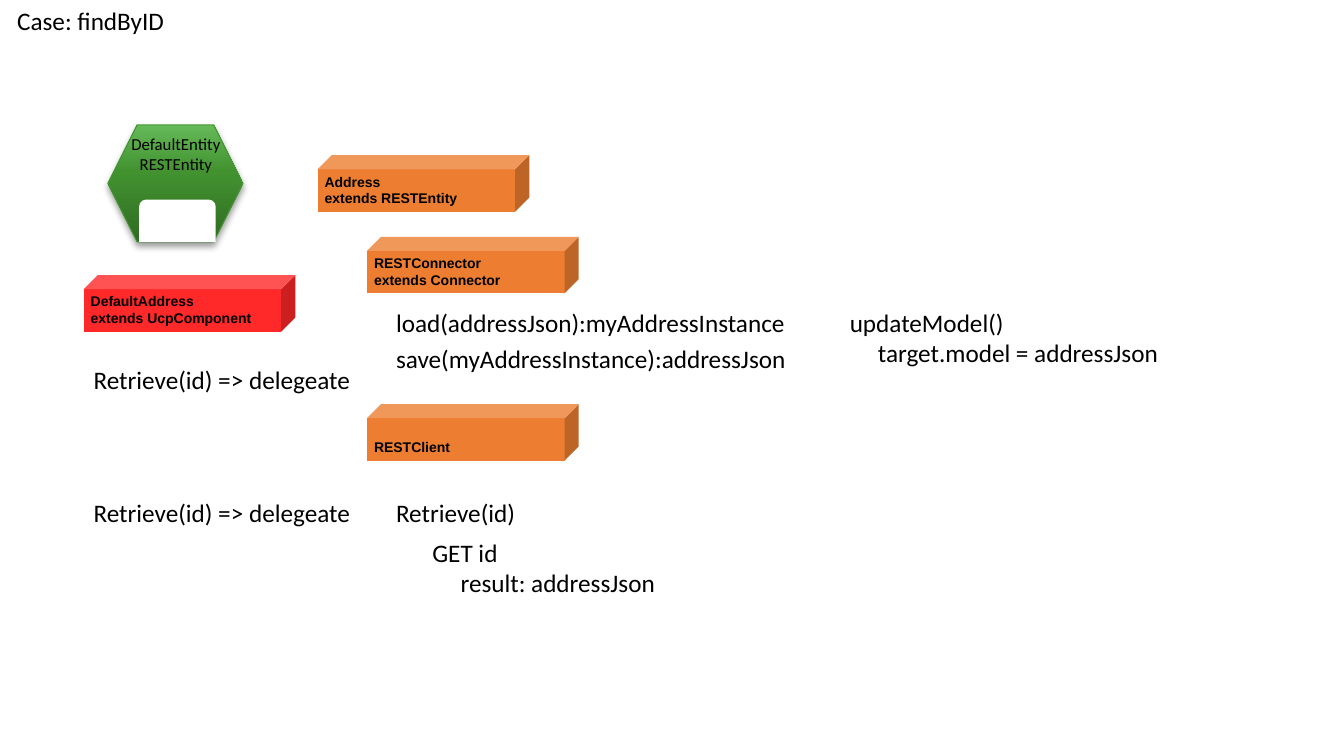
import copy
from dataclasses import dataclass

import pptx
import pptx.dml.color
import pptx.enum.shapes
import pptx.enum.text
import pptx.oxml
import pptx.oxml.ns
import pptx.util

SHAPE = pptx.enum.shapes.MSO_SHAPE
ANCHOR = pptx.enum.text.MSO_ANCHOR
ALIGN = pptx.enum.text.PP_ALIGN
FIT = pptx.enum.text.MSO_AUTO_SIZE


@dataclass(frozen=True)
class Theme:
    ink: str = "000000"
    paper: str = "FFFFFF"
    red: str = "FF2929"
    orange: str = "ED7D31"
    edge: str = "439631"
    greens: tuple = ((0, "2F6B22"), (0.6, "429230"), (1, "66B959"))
    body_font: str = "Calibri"
    cube_font: str = "Arial"
    body: int = 18
    caption: int = 12
    cube: int = 10


def rgb(value):
    return pptx.dml.color.RGBColor.from_string(value)


def write(tf, lines, *, font, size, color, bold=False, align=ALIGN.LEFT, indent=0):
    """Put each line in its own paragraph; indent those after the first."""
    for i, line in enumerate(lines):
        p = tf.add_paragraph() if i else tf.paragraphs[0]
        p.alignment = align
        if i and indent:
            p._p.get_or_add_pPr().set("marL", str(pptx.util.Inches(indent)))
        r = p.add_run()
        r.text = line
        r.font.name, r.font.size, r.font.bold = font, pptx.util.Pt(size), bold
        r.font.color.rgb = rgb(color)


class Board:
    """A slide on a grid of 133.3 columns by 75 rows of square cells."""

    def __init__(self, prs, theme):
        self.theme = theme
        self.cell_w, self.cell_h = prs.slide_width / 133.3, prs.slide_height / 75
        self.s = prs.slides.add_slide(prs.slide_layouts[5])

    def box(self, col, row, cols, rows):
        return (round(col * self.cell_w), round(row * self.cell_h),
                round(cols * self.cell_w), round(rows * self.cell_h))

    def fit_text(self, sp, lines, size, **style):
        tf = sp.text_frame
        tf.word_wrap, tf.auto_size = False, FIT.SHAPE_TO_FIT_TEXT
        tf.vertical_anchor = ANCHOR.TOP
        write(tf, lines, font=self.theme.body_font, size=size,
              color=self.theme.ink, **style)

    def title(self, text, *place):
        sp = self.s.shapes.title
        sp.left, sp.top, sp.width, sp.height = self.box(*place)
        self.fit_text(sp, [text], self.theme.body)

    def label(self, col, row, cols, *lines, size=None, rows=None, **style):
        rows = rows or 0.9 + 3.1 * len(lines)
        sp = self.s.shapes.add_textbox(*self.box(col, row, cols, rows))
        self.fit_text(sp, lines, size or self.theme.body, **style)

    def shape(self, kind, place, shapes=None):
        sp = (shapes or self.s.shapes).add_shape(kind, *self.box(*place))
        sp.shadow.inherit = False
        sp.line.fill.background()
        return sp

    def cube(self, col, row, fill, *lines):
        sp = self.shape(SHAPE.CUBE, (col, row, 21, 5.6))
        sp.fill.solid()
        sp.fill.fore_color.rgb = rgb(fill)
        tf = sp.text_frame
        tf.word_wrap = True
        tf.vertical_anchor = ANCHOR.BOTTOM
        tf.margin_left = tf.margin_right = pptx.util.Inches(0.07)
        tf.margin_top, tf.margin_bottom = pptx.util.Inches(0.03), pptx.util.Inches(0.05)
        write(tf, lines, font=self.theme.cube_font, size=self.theme.cube,
              color=self.theme.ink, bold=True)

    def entity(self, col, row):
        """Draw the green hexagon with its white socket."""
        group = self.s.shapes.add_group_shape()
        sp = self.shape(SHAPE.HEXAGON, (col, row, 13.4, 11.6), group.shapes)
        sp.line.color.rgb = rgb(self.theme.edge)
        sp.line.width = pptx.util.Pt(0.75)
        sp.fill.gradient()
        sp.fill.gradient_angle = 90
        qn = pptx.oxml.ns.qn
        spPr = sp._element.spPr
        stops = spPr.find(".//" + qn("a:gsLst"))
        stops.append(copy.deepcopy(stops[-1]))
        for stop, (position, color) in zip(sp.fill.gradient_stops, self.theme.greens):
            stop.position, stop.color.rgb = position, rgb(color)
        spPr.find(qn("a:effectLst")).append(pptx.oxml.parse_xml(
            f'<a:outerShdw {pptx.oxml.ns.nsdecls("a")} blurRad="{pptx.util.Pt(5.2)}" '
            f'dist="{pptx.util.Pt(3)}" dir="5400000" rotWithShape="0">'
            f'<a:srgbClr val="{self.theme.ink}"><a:alpha val="40000"/></a:srgbClr>'
            '</a:outerShdw>'))
        socket = self.shape(SHAPE.ROUND_2_SAME_RECTANGLE,
                            (col + 3.1, row + 7.4, 7.6, 4.2), group.shapes)
        socket.fill.solid()
        socket.fill.fore_color.rgb = rgb(self.theme.paper)


def main():
    prs = pptx.Presentation()
    prs.slide_width, prs.slide_height = pptx.util.Inches(13.33), pptx.util.Inches(7.5)
    theme = Theme()
    b = Board(prs, theme)
    b.title("Case: findByID", 0.7, 0, 16.8, 4)

    component, connector, method = 8.3, 36.4, 38.3
    b.cube(component, 27.3, theme.red, "DefaultAddress", "extends UcpComponent")
    b.entity(10.7, 12.4)
    b.label(12, 12.8, 10.9, "DefaultEntity", "RESTEntity",
            size=theme.caption, rows=5, align=ALIGN.CENTER)
    b.cube(31.5, 15.4, theme.orange, "Address", "extends RESTEntity")
    b.cube(connector, 40.1, theme.orange, "RESTClient")
    b.cube(connector, 23.5, theme.orange, "RESTConnector", "extends Connector")

    for row in (35.7, 48.8):
        b.label(component, row, 27.8, "Retrieve(id) => delegeate")
    b.label(method, 30, 41.6, "load(addressJson):myAddressInstance")
    b.label(method, 33.6, 41.1, "save(myAddressInstance):addressJson")
    b.label(method, 48.8, 14, "Retrieve(id)")
    b.label(41.9, 52.8, 24.4, "GET id", "result: addressJson", indent=0.28)
    b.label(83.3, 30, 33.6, "updateModel()", "target.model = addressJson", indent=0.28)
    prs.save("out.pptx")


if __name__ == "__main__":
    main()
